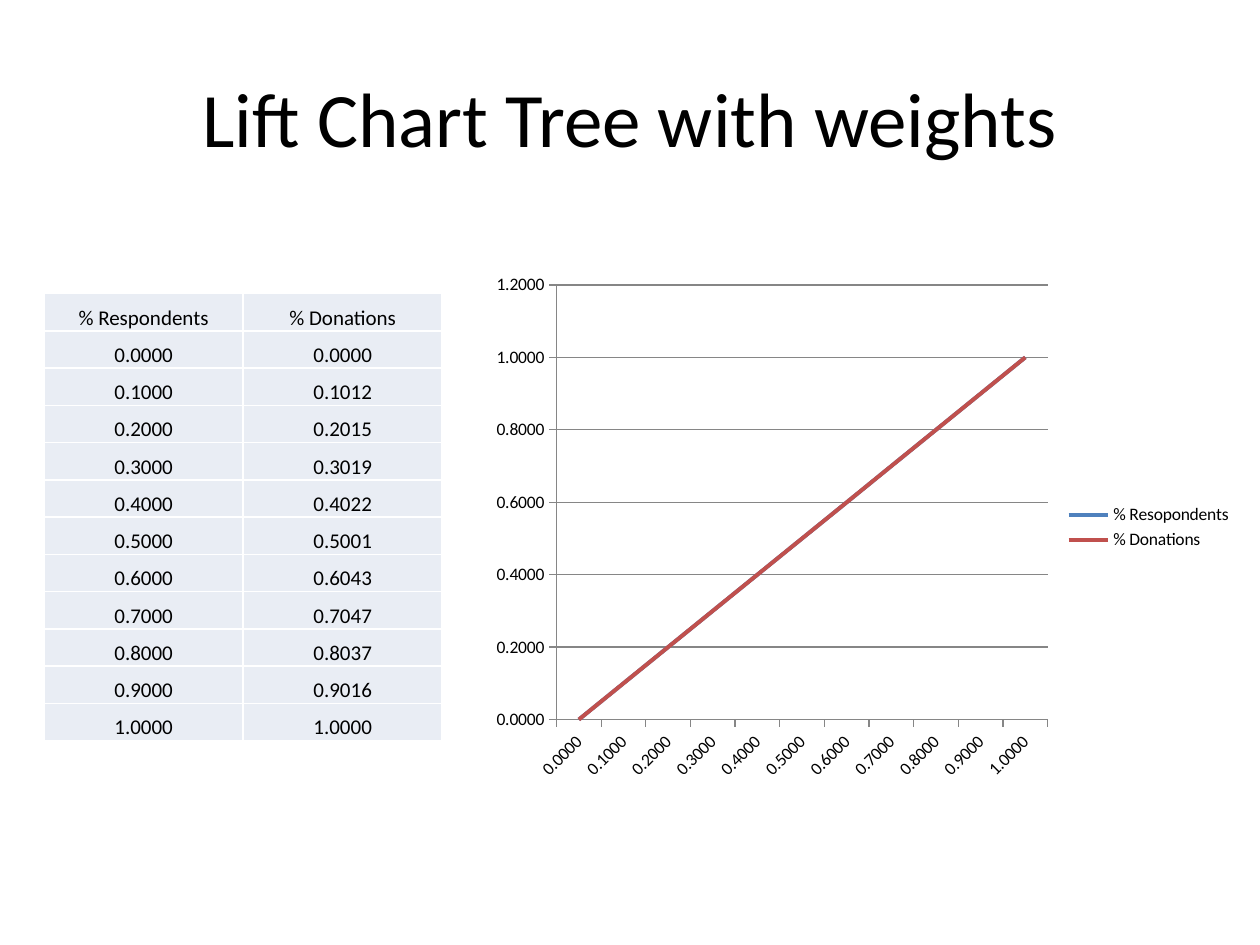
from lxml.etree import SubElement
from pptx import Presentation
from pptx.chart.data import CategoryChartData
from pptx.dml.color import RGBColor
from pptx.enum.chart import XL_CHART_TYPE, XL_LEGEND_POSITION, XL_TICK_MARK
from pptx.enum.text import MSO_ANCHOR, PP_ALIGN
from pptx.oxml.ns import qn
from pptx.util import Inches, Pt

# Content
TITLE = "Lift Chart Tree with weights"
HEADERS = ("% Respondents", "% Donations")
SERIES_NAMES = ("% Resopondents", "% Donations")
RESPONDENTS = [step / 10 for step in range(11)]
DONATIONS = [0, 0.1012, 0.2015, 0.3019, 0.4022, 0.5001,
             0.6043, 0.7047, 0.8037, 0.9016, 1]

THEME = {
    "font": "Calibri",
    "text": RGBColor(0, 0, 0),
    "cell": RGBColor.from_string("E9EDF4"),
    "border": "FFFFFF",
    "axis": RGBColor.from_string("868686"),
    "series": [RGBColor.from_string("4F81BD"), RGBColor.from_string("C0504D")],
    "title_size": Pt(44),
    "table_size": Pt(12),
    "chart_size": Pt(10),
    "number_format": "0.0000",
}


def style_font(font, size):
    font.name = THEME["font"]
    font.size = size
    font.color.rgb = THEME["text"]


def add_borders(cell):
    properties = cell._tc.get_or_add_tcPr()
    for side in ("a:lnL", "a:lnR", "a:lnT", "a:lnB"):
        line = SubElement(properties, qn(side), w=str(Pt(1)))
        fill = SubElement(line, qn("a:solidFill"))
        SubElement(fill, qn("a:srgbClr"), val=THEME["border"])


def format_cell(cell, text):
    cell.text = text
    cell.vertical_anchor = MSO_ANCHOR.BOTTOM
    cell.margin_left = cell.margin_right = cell.margin_top = Inches(0.01)
    cell.margin_bottom = 0
    paragraph = cell.text_frame.paragraphs[0]
    paragraph.alignment = PP_ALIGN.CENTER
    style_font(paragraph.font, THEME["table_size"])
    add_borders(cell)
    cell.fill.solid()
    cell.fill.fore_color.rgb = THEME["cell"]


def add_title(slide):
    title = slide.shapes.title
    title.left, title.top = Inches(0.5), Inches(0.3)
    title.width, title.height = Inches(9), Inches(1.25)
    title.text_frame.text = TITLE
    title.text_frame.vertical_anchor = MSO_ANCHOR.MIDDLE
    paragraph = title.text_frame.paragraphs[0]
    paragraph.alignment = PP_ALIGN.CENTER
    style_font(paragraph.font, THEME["title_size"])


def add_lift_table(slide):
    rows = [HEADERS] + [(f"{respondents:.4f}", f"{donations:.4f}")
                        for respondents, donations in zip(RESPONDENTS, DONATIONS)]
    table = slide.shapes.add_table(
        len(rows), len(HEADERS),
        Inches(0.35), Inches(2.33), Inches(3.16), Inches(3.55)).table
    for row_index, row in enumerate(rows):
        for column_index, text in enumerate(row):
            format_cell(table.cell(row_index, column_index), text)


def add_lift_chart(slide):
    data = CategoryChartData(number_format=THEME["number_format"])
    data.categories = RESPONDENTS
    data.categories.number_format = THEME["number_format"]
    for name, values in zip(SERIES_NAMES, (RESPONDENTS, DONATIONS)):
        data.add_series(name, [round(value, 1) for value in values])
    chart = slide.shapes.add_chart(
        XL_CHART_TYPE.LINE,
        Inches(3.82), Inches(2.1), Inches(6.06), Inches(4.17), data).chart
    style_font(chart.font, THEME["chart_size"])
    chart.has_title = False
    chart.has_legend = True
    chart.legend.position = XL_LEGEND_POSITION.RIGHT
    chart.legend.include_in_layout = False

    # Lines
    chart.plots[0].vary_by_categories = False
    for series, color in zip(chart.plots[0].series, THEME["series"]):
        series.smooth = False
        series.format.line.color.rgb = color
        series.format.line.width = Pt(2.25)

    # Axes
    for axis in (chart.category_axis, chart.value_axis):
        axis.major_tick_mark = XL_TICK_MARK.OUTSIDE
        axis.minor_tick_mark = XL_TICK_MARK.NONE
        axis.format.line.color.rgb = THEME["axis"]
        axis.tick_labels.number_format = THEME["number_format"]
        axis.tick_labels.number_format_is_linked = False
        style_font(axis.tick_labels.font, THEME["chart_size"])
    chart.category_axis._element.find(qn("c:txPr")).find(
        qn("a:bodyPr")).set("rot", str(-45 * 60000))
    value_axis = chart.value_axis
    value_axis.minimum_scale, value_axis.maximum_scale = 0, 1.2
    value_axis.major_unit = 0.2
    value_axis.has_major_gridlines = True
    value_axis.major_gridlines.format.line.color.rgb = THEME["axis"]


def main():
    presentation = Presentation()
    presentation.slide_width, presentation.slide_height = Inches(10), Inches(7.5)
    slide = presentation.slides.add_slide(presentation.slide_layouts[5])
    add_title(slide)
    add_lift_table(slide)
    add_lift_chart(slide)
    presentation.save("out.pptx")


if __name__ == "__main__":
    main()
